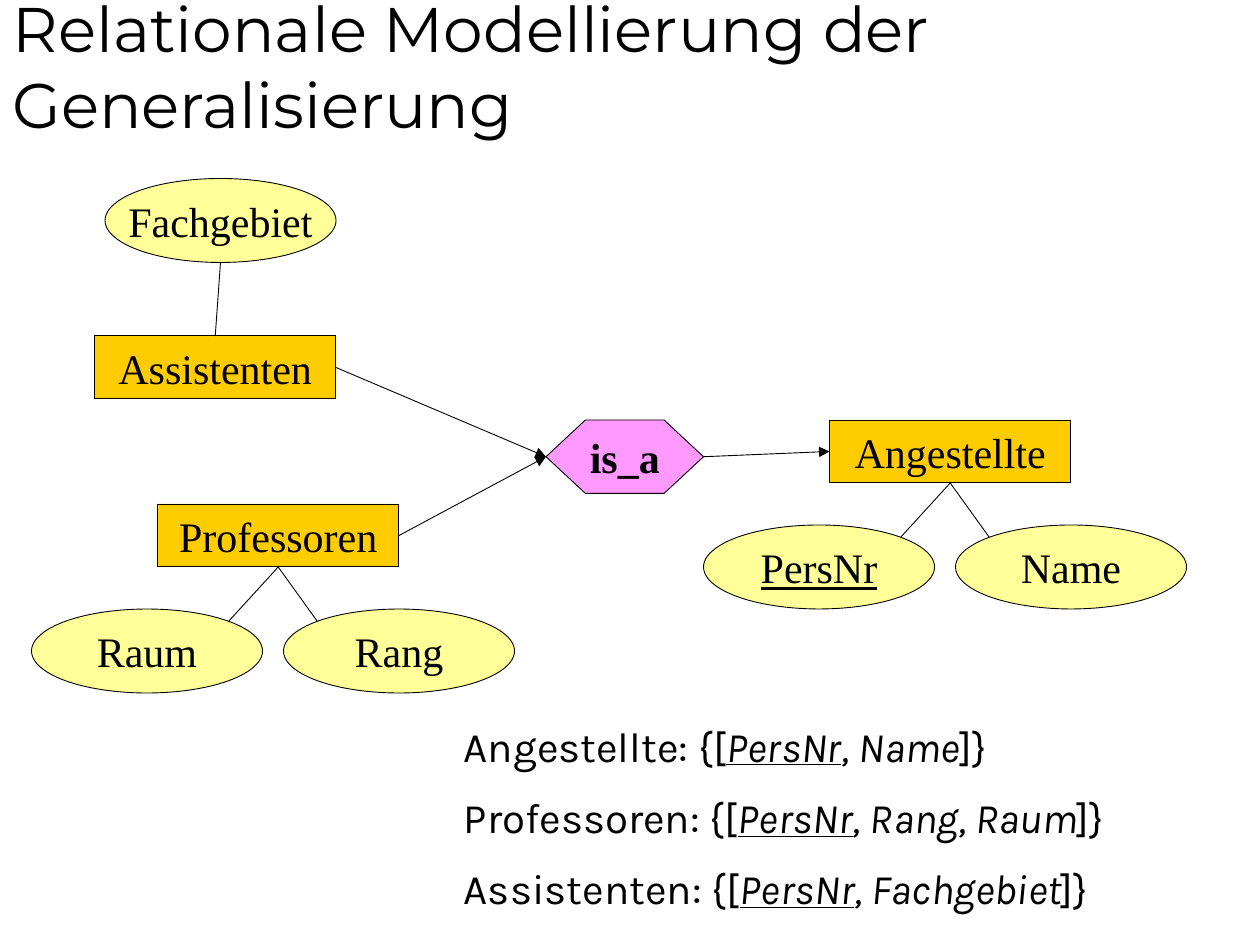
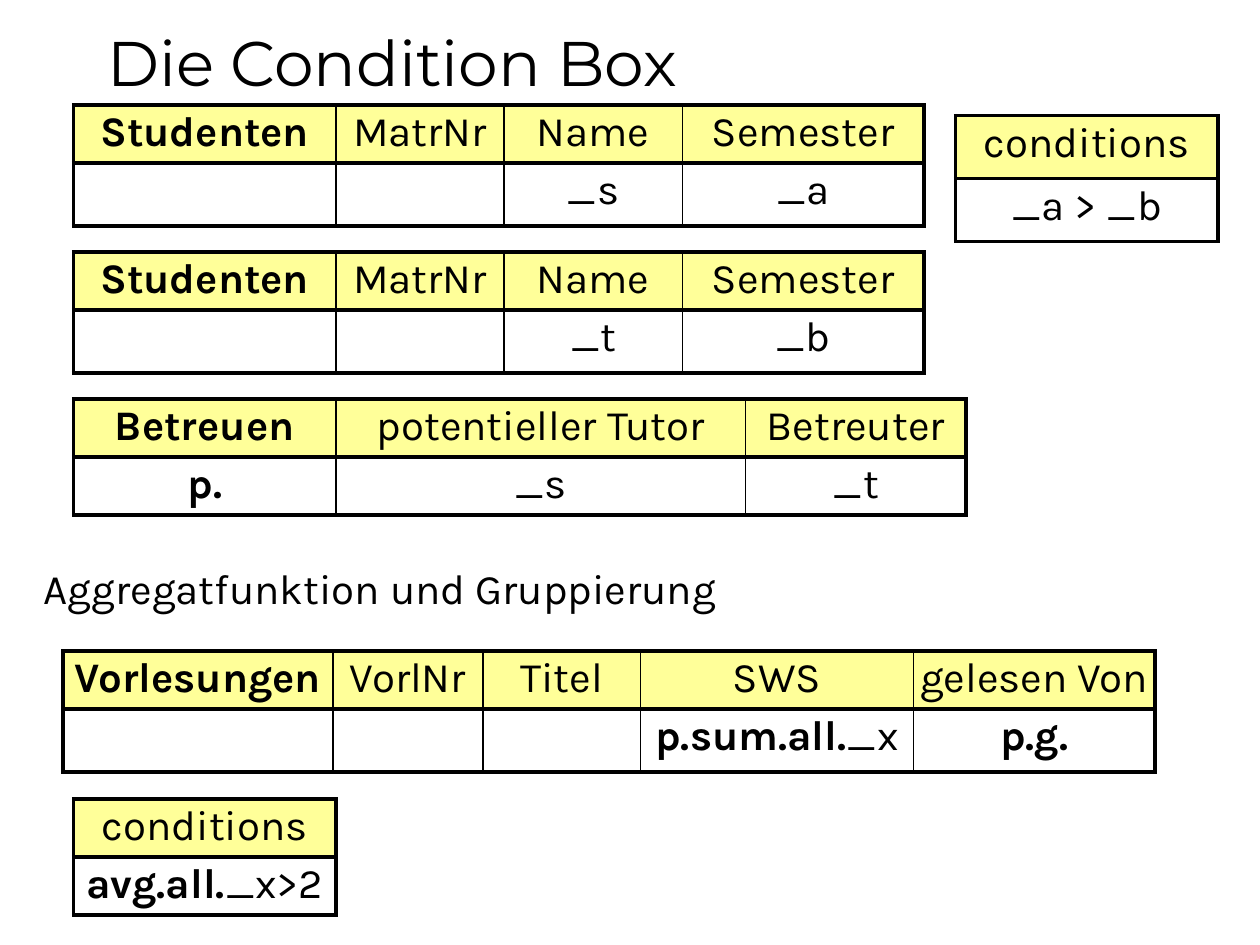
"""Build two slides: relational modelling of a generalisation, and the QBE condition box."""
from dataclasses import dataclass
from math import sqrt

from lxml.etree import SubElement
from pptx import Presentation
from pptx.dml.color import RGBColor
from pptx.enum.shapes import MSO_CONNECTOR, MSO_SHAPE as SHAPE
from pptx.enum.text import MSO_ANCHOR as ANCHOR, MSO_AUTO_SIZE, PP_ALIGN as ALIGN
from pptx.oxml.ns import qn
from pptx.util import Pt

PX = 7620


@dataclass(frozen=True)
class Theme:
    ink: str = "000000"
    entity: str = "FFCC00"
    attribute: str = "FFFF99"
    relationship: str = "FF99FF"
    title_font: str = "Montserrat"
    body_font: str = "Karla"
    diagram_font: str = "Times New Roman"
    title_size: int = 36
    body_size: int = 24
    thin: float = 0.5
    inner: float = 1
    heavy: float = 2.25


theme = Theme()
ink = RGBColor.from_string(theme.ink)


def write(paragraph, runs, name=theme.body_font, size=theme.body_size):
    paragraph.font.name, paragraph.font.size = name, Pt(size)
    paragraph.font.color.rgb = ink
    for text, flags in runs:
        run = paragraph.add_run()
        run.text = text
        font = paragraph.font if len(runs) == 1 else run.font
        if "b" in flags:
            font.bold = True
        if "i" in flags:
            font.italic = True
        if "u" in flags:
            font.underline = True


def add_titled_slide(title, *box):
    slide = prs.slides.add_slide(prs.slide_layouts[5])
    heading = slide.shapes.title
    heading.left, heading.top, heading.width, heading.height = [v * PX for v in box]
    frame = heading.text_frame
    frame.auto_size = MSO_AUTO_SIZE.NONE
    frame.vertical_anchor = ANCHOR.BOTTOM
    frame.paragraphs[0].alignment = ALIGN.LEFT
    write(frame.paragraphs[0], [(title, "")], theme.title_font, theme.title_size)
    return slide.shapes


prs = Presentation()
prs.slide_width, prs.slide_height = 1200 * PX, 900 * PX

diagram = add_titled_slide("Relationale Modellierung der Generalisierung", 0, 0, 1200, 140)

kinds = {
    "entity": (SHAPE.RECTANGLE, 230, 60, theme.entity),
    "attribute": (SHAPE.OVAL, 220, 80, theme.attribute),
    "relationship": (SHAPE.HEXAGON, 150, 70, theme.relationship),
}
nodes = {}
for label, kind, left, top, flags in [
    ("Fachgebiet", "attribute", 100, 170, ""),
    ("Assistenten", "entity", 90, 320, ""),
    ("Professoren", "entity", 150, 480, ""),
    ("Raum", "attribute", 30, 580, ""),
    ("Rang", "attribute", 270, 580, ""),
    ("is_a", "relationship", 520, 400, "b"),
    ("Angestellte", "entity", 790, 400, ""),
    ("PersNr", "attribute", 670, 500, "u"),
    ("Name", "attribute", 910, 500, ""),
]:
    outline, width, height, color = kinds[kind]
    node = diagram.add_shape(outline, left * PX, top * PX, width * PX, height * PX)
    if kind == "relationship":
        node.adjustments[0] = 0.536
    node.shadow.inherit = False
    node.fill.solid()
    node.fill.fore_color.rgb = RGBColor.from_string(color)
    node.line.color.rgb = ink
    node.line.width = Pt(theme.thin)
    node.text_frame.word_wrap = False
    node.text_frame.vertical_anchor = ANCHOR.MIDDLE
    node.text_frame.paragraphs[0].alignment = ALIGN.CENTER
    write(node.text_frame.paragraphs[0], [(label, flags)], theme.diagram_font)
    nodes[label] = node

TOP, BOTTOM, LEFT, RIGHT = 0, 2, 1, 3
DIAGONAL = 1 / sqrt(2)
for entity, side, partner, dx, dy, arrow in [
    ("Assistenten", TOP, "Fachgebiet", 0, 1, None),
    ("Professoren", BOTTOM, "Raum", DIAGONAL, -DIAGONAL, None),
    ("Professoren", BOTTOM, "Rang", -DIAGONAL, -DIAGONAL, None),
    ("Angestellte", BOTTOM, "PersNr", DIAGONAL, -DIAGONAL, None),
    ("Angestellte", BOTTOM, "Name", -DIAGONAL, -DIAGONAL, None),
    ("Assistenten", RIGHT, "is_a", -1, 0, "tailEnd"),
    ("Professoren", RIGHT, "is_a", -1, 0, "tailEnd"),
    ("Angestellte", LEFT, "is_a", 1, 0, "headEnd"),
]:
    target = nodes[partner]
    x = round(target.left + target.width * (1 + dx) / 2)
    y = round(target.top + target.height * (1 + dy) / 2)
    edge = diagram.add_connector(MSO_CONNECTOR.STRAIGHT, x, y, x, y)
    edge.begin_connect(nodes[entity], side)
    edge.line.color.rgb = ink
    edge.line.width = Pt(theme.thin)
    properties = edge._element.spPr
    if arrow:
        end = "headEnd" if arrow == "tailEnd" and side == LEFT else arrow
        end = "tailEnd" if side == RIGHT else "headEnd"
        SubElement(properties.find(qn("a:ln")), qn(f"a:{end}"), type="triangle")
    SubElement(properties, qn("a:effectLst"))

schema = diagram.add_textbox(430 * PX, 680 * PX, 770 * PX, 220 * PX).text_frame
schema.word_wrap = True
for index, (relation, attributes) in enumerate([
    ("Angestellte", "Name"),
    ("Professoren", "Rang, Raum"),
    ("Assistenten", "Fachgebiet"),
]):
    paragraph = schema.add_paragraph() if index else schema.paragraphs[0]
    if index:
        paragraph.space_before = Pt(theme.body_size / 2)
    write(paragraph, [(f"{relation}: {{[", ""), ("PersNr", "iu"), (f", {attributes}", "i"), ("]}", "")])

queries = add_titled_slide("Die Condition Box", 90, -50, 1020, 150)

subtitle = queries.add_textbox(30 * PX, 530 * PX, 1020 * PX, 60 * PX).text_frame
subtitle.word_wrap = True
write(subtitle.paragraphs[0], [("Aggregatfunktion und Gruppierung", "")])

student_columns = [250, 160, 170, 230]
student_header = ["*Studenten*", "MatrNr", "Name", "Semester"]
for left, top, row_height, columns, header, body in [
    (70, 100, 55, student_columns, student_header, ["", "", "_s", "_a"]),
    (70, 240, 55, student_columns, student_header, ["", "", "_t", "_b"]),
    (70, 380, 55, [250, 390, 210], ["*Betreuen*", "potentieller Tutor", "Betreuter"], ["*p.*", "_s", "_t"]),
    (60, 620, 55, [257, 143, 150, 260, 230],
     ["*Vorlesungen*", "VorlNr", "Titel", "SWS", "gelesen Von"], ["", "", "", "*p.sum.all.*_x", "*p.g.*"]),
    (70, 761, 55, [250], ["conditions"], ["*avg.all.*_x>2"]),
    (910, 110, 60, [250], ["conditions"], ["_a > _b"]),
]:
    heights = [row_height, row_height + 3 if "" in body else row_height]
    table = queries.add_table(
        2, len(columns), left * PX, top * PX, sum(columns) * PX, sum(heights) * PX).table
    table.first_row = table.horz_banding = False
    for column, width in zip(table.columns, columns):
        column.width = width * PX
    for row, height, entries in zip(table.rows, heights, [header, body]):
        row.height = height * PX
        for position, (cell, entry) in enumerate(zip(row.cells, entries)):
            cell.margin_left = cell.margin_right = 0
            paragraph = cell.text_frame.paragraphs[0]
            paragraph.alignment = ALIGN.CENTER
            paragraph.line_spacing = 0.9
            pieces = enumerate(entry.split("*"))
            write(paragraph, [(text, "b" if i % 2 else "") for i, text in pieces if text])
            borders = {
                "lnL": theme.inner if position else theme.heavy,
                "lnR": theme.inner if position < len(columns) - 1 else theme.heavy,
                "lnT": theme.heavy,
                "lnB": theme.heavy,
            }
            cell_properties = cell._tc.get_or_add_tcPr()
            for tag, weight in borders.items():
                border = SubElement(cell_properties, qn(f"a:{tag}"), w=str(Pt(weight)))
                fill = SubElement(border, qn("a:solidFill"))
                SubElement(fill, qn("a:srgbClr"), val=theme.ink)
            if entries is header:
                cell.fill.solid()
                cell.fill.fore_color.rgb = RGBColor.from_string(theme.attribute)
            else:
                cell.fill.background()

prs.save("out.pptx")
